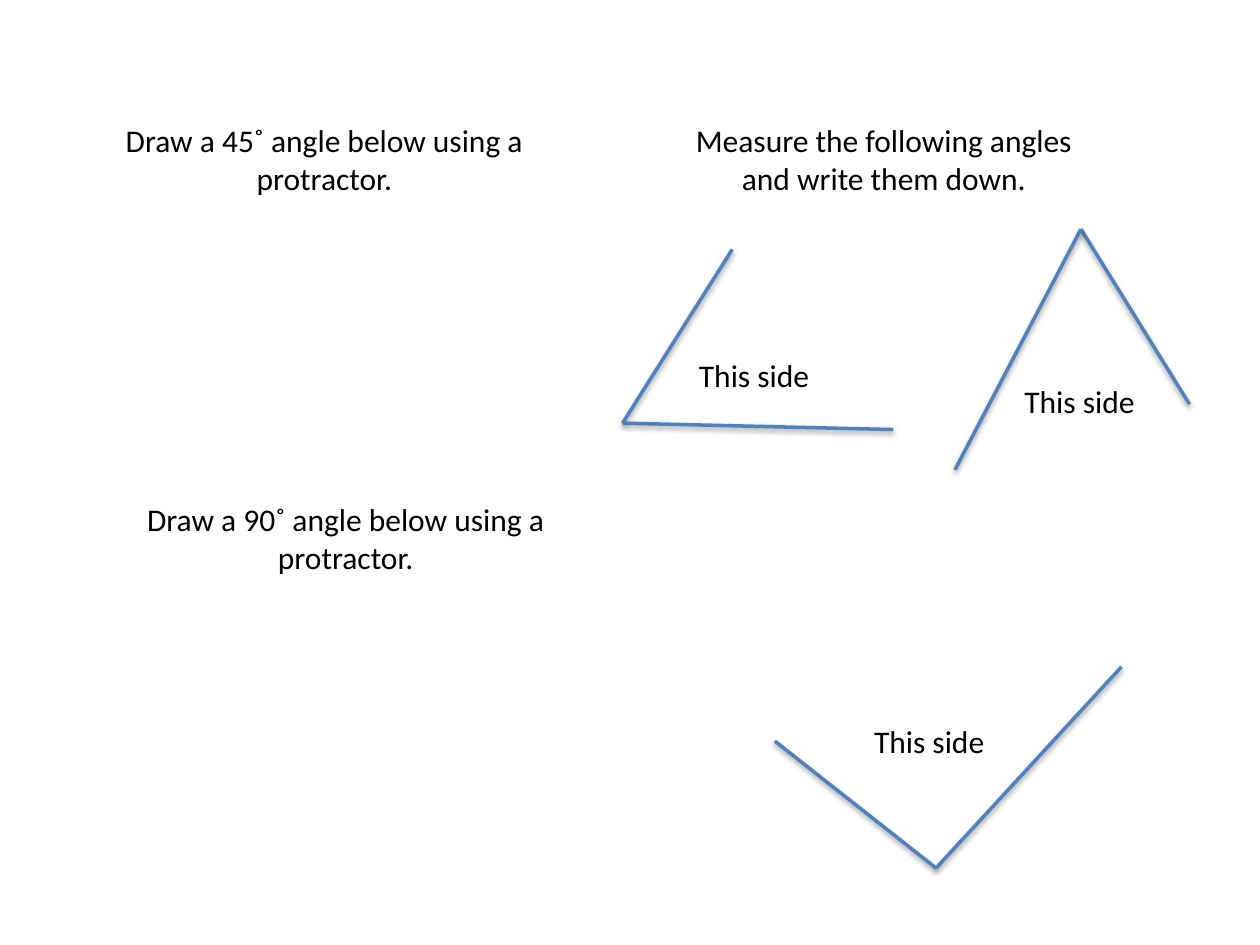
from pptx import Presentation
from pptx.dml.color import RGBColor
from pptx.enum.shapes import MSO_CONNECTOR
from pptx.enum.text import MSO_AUTO_SIZE, PP_ALIGN
from pptx.util import Cm, Pt

BLACK = RGBColor(0x00, 0x00, 0x00)
BLUE = RGBColor(0x4F, 0x81, 0xBD)
BLANK_LAYOUT = 6

# Left and top of each box in cm
INSTRUCTIONS = [
    ("Draw a 45˚ angle below using a protractor.", 2.16, 2.31),
    ("Measure the following angles and write them down.", 13.44, 2.31),
    ("Draw a 90˚ angle below using a protractor.", 2.59, 9.96),
]
# First end, vertex and second end of each angle in cm
ANGLES = [
    ((14.76, 5.03), (12.55, 8.53), (18.01, 8.66)),
    ((15.62, 14.94), (18.87, 17.5), (22.61, 13.44)),
    ((23.98, 8.15), (21.79, 4.62), (19.25, 9.47)),
]
SIDE_LABELS = [(13.84, 7.06), (20.4, 7.57), (17.37, 14.43)]


def write_text(frame, text, font="Calibri", size=18, color=BLACK,
               align=PP_ALIGN.LEFT):
    para = frame.paragraphs[0]
    para.alignment = align
    span = para.add_run()
    span.text = text
    span.font.name = font
    span.font.size = Pt(size)
    span.font.color.rgb = color


class Worksheet:
    """Holds the line style and the page being drawn."""

    def __init__(self, page, line_color=BLUE, line_width=2):
        self.page = page
        self.line_color = line_color
        self.line_width = Pt(line_width)

    def text_box(self, text, left, top, width, height, wrap=True, **text_format):
        box = self.page.shapes.add_textbox(Cm(left), Cm(top), Cm(width), Cm(height))
        frame = box.text_frame
        frame.word_wrap = wrap
        frame.auto_size = MSO_AUTO_SIZE.SHAPE_TO_FIT_TEXT
        write_text(frame, text, **text_format)

    def instruction(self, text, left, top):
        self.text_box(text, left, top, 8.76, 1.8, align=PP_ALIGN.CENTER)

    def side_label(self, left, top):
        self.text_box("This side", left, top, 2.77, 1.02, wrap=False)

    def angle(self, first_end, vertex, second_end):
        """Group two arms that meet at the vertex; the theme gives their shadow."""
        group = self.page.shapes.add_group_shape()
        for end in (first_end, second_end):
            points = [Cm(value) for value in (*end, *vertex)]
            arm = group.shapes.add_connector(MSO_CONNECTOR.STRAIGHT, *points)
            arm.line.color.rgb = self.line_color
            arm.line.width = self.line_width


def main():
    deck = Presentation()
    deck.slide_width, deck.slide_height = Cm(25.4), Cm(19.05)
    sheet = Worksheet(deck.slides.add_slide(deck.slide_layouts[BLANK_LAYOUT]))
    for instruction in INSTRUCTIONS:
        sheet.instruction(*instruction)
    for points in ANGLES:
        sheet.angle(*points)
    for position in SIDE_LABELS:
        sheet.side_label(*position)
    deck.save("out.pptx")


if __name__ == "__main__":
    main()
